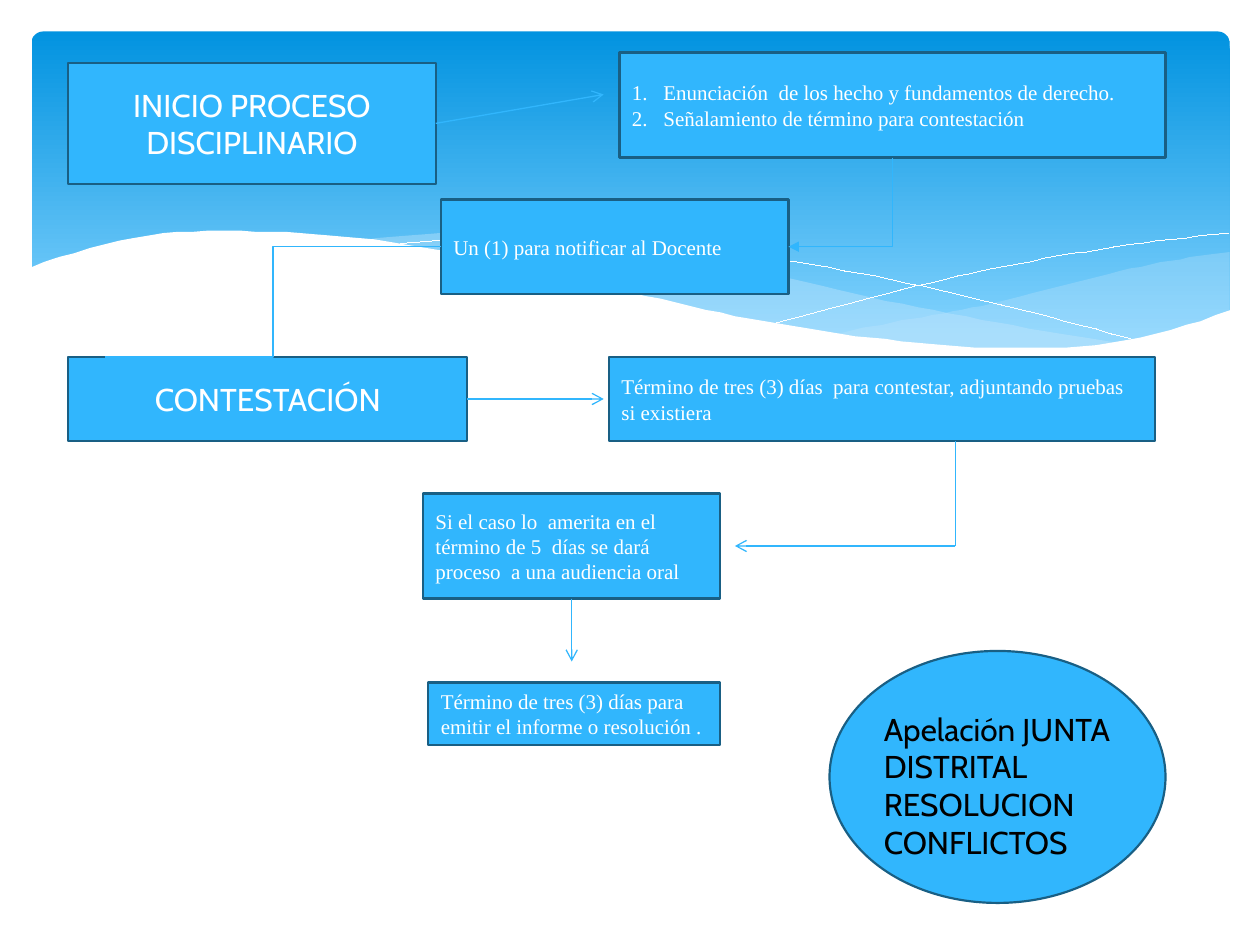
from lxml import etree
from pptx import Presentation, util as u
from pptx.dml.color import RGBColor
from pptx.enum import shapes, text
from pptx.oxml.ns import qn

prs = Presentation()
prs.slide_width, prs.slide_height = u.Inches(10), u.Inches(7.5)
slide = prs.slides.add_slide(prs.slide_layouts[6])
parts = slide.shapes

CELL = prs.slide_width / 120  # grid of 120 columns by 90 rows
WAVE_UNIT = prs.slide_width / 1000  # waves are measured in thousandths of the width
SAMPLES = 8  # points drawn between two known heights of a wave
SKY, NAVY, WHITE, ICE, BLACK = "31B6FD", "195F84", "FFFFFF", "C6E7FC", "000000"


def paint(target, color):
    """Give a fill, line or font one solid colour."""
    if hasattr(target, "solid"):
        target.solid()
        target.fore_color.rgb = RGBColor.from_string(color)
    else:
        target.color.rgb = RGBColor.from_string(color)


def smooth_edge(left, right, heights):
    """Run a Catmull-Rom curve through heights spaced evenly from left to right."""
    gaps = len(heights) - 1
    before, after = (3 * a - 3 * b + c for a, b, c in (heights[:3], heights[:-4:-1]))
    known = [before, *heights, after]
    edge = []
    for step in range(gaps * SAMPLES + 1):
        gap = min(step // SAMPLES, gaps - 1)
        t = step / SAMPLES - gap
        a, b, c, d = known[gap:gap + 4]
        y = b + t / 2 * (c - a + t * (2 * a - 5 * b + 4 * c - d + t * (3 * (b - c) + d - a)))
        edge.append((left + (right - left) * step / (gaps * SAMPLES), y))
    return edge


# Rounded banner with gradient
banner = parts.add_shape(shapes.MSO_SHAPE.ROUNDED_RECTANGLE,
                         *[int(c * CELL) for c in (3, 3, 114.1, 32.4)])
banner.adjustments[0] = 0.034
banner.shadow.inherit = False
banner.line.fill.background()
banner.fill.gradient()
banner.fill.gradient_angle = 270
for stop, position, color in zip(banner.fill.gradient_stops, (0, 0.9), ("0293E0", "83D3FE")):
    stop.position = position
    paint(stop, color)

# Waves: a band lies between its upper and lower heights, a thread has upper heights only
waves = [
    dict(span=(661, 976), color=ICE, opacity=29,
         upper=[265, 253, 241, 225, 210, 200], lower=[265, 272, 277, 277, 267, 247]),
    dict(span=(286, 893), color=ICE, opacity=40,
         upper=[191, 185, 194, 212, 236, 256, 273], lower=[191, 207, 231, 253, 269, 278, 273]),
    dict(span=(309, 907), color=WHITE, upper=[195, 187, 190, 204, 222, 245, 272]),
    dict(span=(613, 975), color=WHITE, upper=[257, 233, 212, 196, 185]),
    dict(span=(23, 977), color=WHITE, opacity=100, lower=[329, 329, 329],
         upper=[213, 187, 184, 192, 210, 232, 253, 268, 276, 272, 246]),
]
for wave in waves:
    is_band = "lower" in wave
    outline = smooth_edge(*wave["span"], wave["upper"])
    if is_band:
        outline += reversed(smooth_edge(*wave["span"], wave["lower"]))
    builder = parts.build_freeform(*outline[0], scale=WAVE_UNIT)
    builder.add_line_segments(outline[1:], close=is_band)
    ribbon = builder.convert_to_shape()
    ribbon.shadow.inherit = False
    if is_band:
        ribbon.line.fill.background()
        paint(ribbon.fill, wave["color"])
        tone = ribbon._element.spPr.find(qn("a:solidFill")).find(qn("a:srgbClr"))
        etree.SubElement(tone, qn("a:alpha"), val=str(wave["opacity"] * 1000))
    else:
        ribbon.fill.background()
        paint(ribbon.line, wave["color"])
        ribbon.line.width = u.Pt(0.01)

# Text formats
heading = dict(align=text.PP_ALIGN.CENTER, color=WHITE,
               font=dict(name="Cabin", size=u.Pt(18)))
detail = dict(align=text.PP_ALIGN.LEFT, color=WHITE,
              font=dict(name="Times New Roman", size=u.Pt(12)))
appeal = dict(heading, align=text.PP_ALIGN.LEFT, color=BLACK)

# Steps of the process: outline, (column, row, columns wide, rows high), format, paragraphs
RECT, OVAL, BARE = shapes.MSO_SHAPE.RECTANGLE, shapes.MSO_SHAPE.OVAL, None
steps = {
    "inicio": (RECT, (6.5, 6, 35, 11.5), heading, ["INICIO PROCESO", "DISCIPLINARIO"]),
    "hechos": (RECT, (59, 5, 52, 10), detail,
               ["Enunciación  de los hecho y fundamentos de derecho.",
                "Señalamiento de término para contestación"]),
    "contestación": (RECT, (6.5, 34, 38, 8), heading, ["CONTESTACIÓN"]),
    "término": (RECT, (58, 34, 52, 8), detail,
                ["Término de tres (3) días  para contestar, adjuntando pruebas si existiera"]),
    "notificación": (RECT, (42, 19, 33.1, 9), detail, ["Un (1) para notificar al Docente"]),
    "audiencia": (RECT, (40.3, 47, 28.3, 10), detail,
                  ["Si el caso lo  amerita en el término de 5  días se dará proceso  "
                   "a una audiencia oral"]),
    "informe": (RECT, (40.8, 65, 27.8, 6), detail,
                ["Término de tres (3) días para emitir el informe o resolución ."]),
    "óvalo": (OVAL, (79, 62, 32, 24), appeal, []),
    "apelación": (BARE, (83, 67, 25, 15.75), appeal,
                  ["Apelación JUNTA", "DISTRITAL", "RESOLUCION CONFLICTOS"]),
}
boxes = {}
for step, (outline, place, style, lines) in steps.items():
    place = [int(c * CELL) for c in place]
    if outline is BARE:
        box = parts.add_textbox(*place)
        box.text_frame.auto_size = text.MSO_AUTO_SIZE.SHAPE_TO_FIT_TEXT
    else:
        box = parts.add_shape(outline, *place)
        box.shadow.inherit = False
        paint(box.fill, SKY)
        paint(box.line, NAVY)
        box.line.width = u.Pt(1.25)
        box.text_frame.vertical_anchor = text.MSO_ANCHOR.MIDDLE
    boxes[step] = box
    frame = box.text_frame
    frame.word_wrap = True
    for i, line in enumerate(lines):
        paragraph = frame.add_paragraph() if i else frame.paragraphs[0]
        paragraph.alignment = style["align"]
        run = paragraph.add_run()
        run.text = line
        for name, value in style["font"].items():
            setattr(run.font, name, value)
        paint(run.font, style["color"])

# Numbering of the facts and the deadline
for paragraph in boxes["hechos"].text_frame.paragraphs:
    layout = paragraph._p.get_or_add_pPr()
    layout.set("marL", str(u.Inches(0.25)))
    layout.set("indent", str(-u.Inches(0.25)))
    etree.SubElement(layout, qn("a:buAutoNum"), type="arabicPeriod")

# Links: kind, start, end, arrowhead (end of line, type), step joined at the start and its side
STRAIGHT, ELBOW = shapes.MSO_CONNECTOR.STRAIGHT, shapes.MSO_CONNECTOR.ELBOW
BOTTOM, RIGHT = 2, 3
arrow = ("a:tailEnd", "arrow")
links = [
    (STRAIGHT, (41.5, 11.75), (57.5, 9), arrow, ("inicio", RIGHT)),
    (STRAIGHT, (44.5, 38), (57.5, 38), arrow, ("contestación", RIGHT)),
    (STRAIGHT, (91, 42), (91, 52), None, None),
    (STRAIGHT, (91, 52), (70, 52), arrow, None),
    (STRAIGHT, (54.45, 57), (54.45, 63), arrow, ("audiencia", BOTTOM)),
    (ELBOW, (75.1, 23.5), (85, 15), ("a:headEnd", "triangle"), None),
    (ELBOW, (42, 23.5), (10, 34), None, None),
]
for kind, start, end, head, joined in links:
    link = parts.add_connector(kind, *[int(c * CELL) for c in start + end])
    if joined:
        step, side = joined
        link.begin_connect(boxes[step], side)
    paint(link.line, SKY)
    link.line.width = u.Pt(0.75)
    if head:
        line_end, head_type = head
        etree.SubElement(link.line._get_or_add_ln(), qn(line_end), type=head_type)
    if kind == ELBOW and head:  # a single corner
        link._element.spPr.find(qn("a:prstGeom")).set("prst", "bentConnector2")
    etree.SubElement(link._element.spPr, qn("a:effectLst"))

prs.save("out.pptx")
